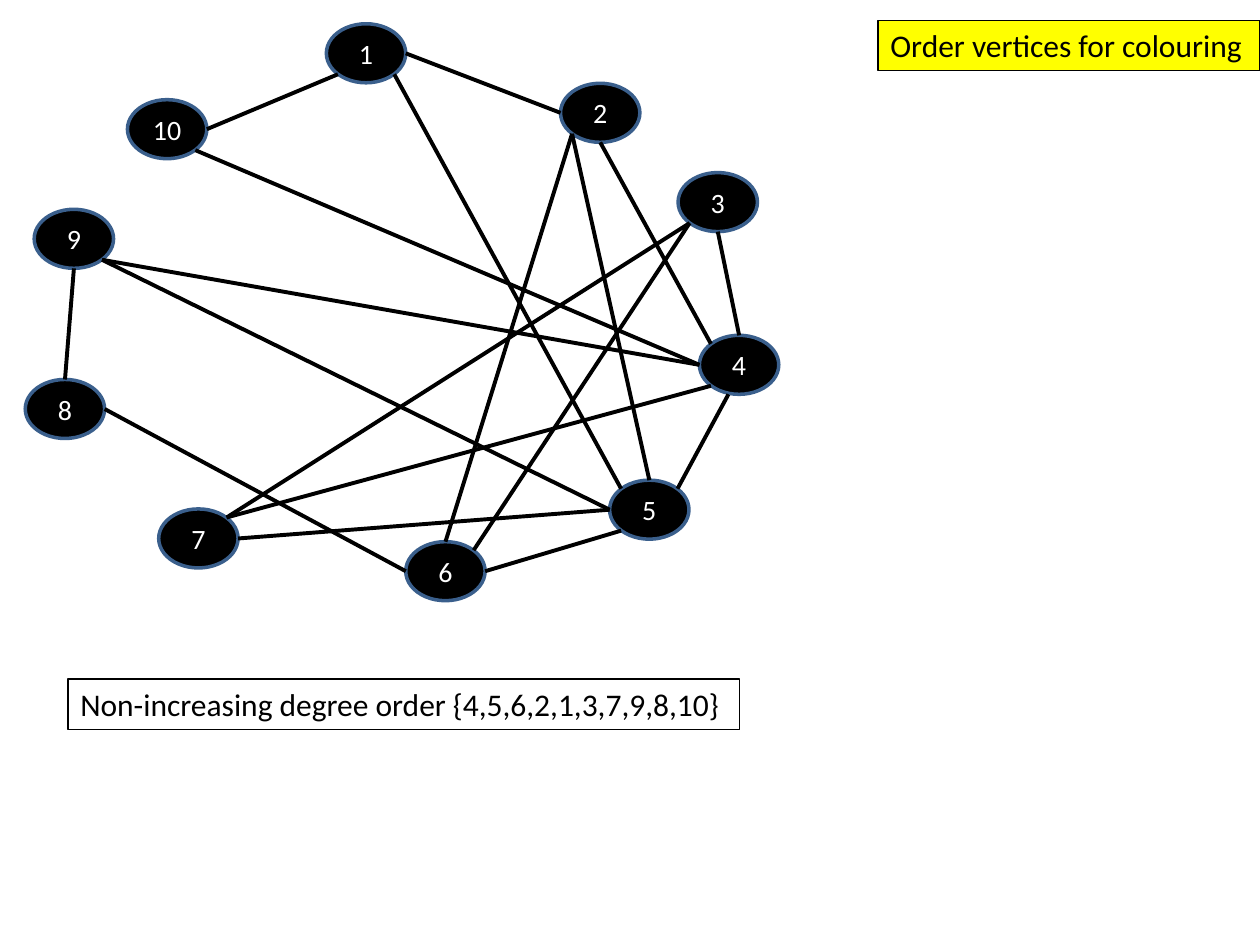
from pptx import Presentation
from pptx.dml.color import RGBColor as RGB
from pptx.enum.shapes import MSO_CONNECTOR as LINE, MSO_SHAPE as SHAPE
from pptx.enum.text import MSO_ANCHOR as ANCHOR, PP_ALIGN as ALIGN
from pptx.oxml.ns import qn
from pptx.util import Cm, Pt
from lxml.etree import SubElement

COLORS = {"ink": "000000", "rim": "3A5F8C", "label": "FFFFFF", "note": "FFFF00"}
FONT = "Calibri"
NODE_W, NODE_H = 1.6, 1.19

# Left and top of each vertex, in cm
NODES = {
    1: (6.58, 0.48), 2: (11.3, 1.68), 3: (13.67, 3.48), 4: (14.1, 6.76),
    5: (12.29, 9.68), 6: (8.18, 10.92), 7: (3.2, 10.26), 8: (0.51, 7.65),
    9: (0.69, 4.22), 10: (2.57, 2.01),
}

# Compass points on the rim, as parts of the half width and half height
DIAG = 0.71
SITES = {
    "N": (0, -1), "E": (1, 0), "S": (0, 1), "W": (-1, 0),
    "NE": (DIAG, -DIAG), "SE": (DIAG, DIAG),
    "SW": (-DIAG, DIAG), "NW": (-DIAG, -DIAG),
    "SSW": (-0.27, 1),
}

EDGES = [
    (1, "E", 2, "W"), (1, "SE", 5, "NW"), (10, "E", 1, "SW"),
    (2, "S", 4, "NW"), (8, "N", 9, "S"), (5, "N", 2, "SW"),
    (2, "SW", 6, "N"), (4, "N", 3, "S"), (3, "SW", 6, "NE"),
    (3, "SW", 7, "NE"), (5, "NE", 4, "SSW"), (7, "NE", 4, "SW"),
    (9, "SE", 4, "W"), (10, "SE", 4, "W"), (6, "E", 5, "SW"),
    (7, "E", 5, "W"), (9, "SE", 5, "W"), (6, "W", 8, "E"),
]


def color(name):
    return RGB.from_string(COLORS[name])


def set_line(line, name, width):
    line.color.rgb = color(name)
    line.width = Pt(width)


def set_text(frame, text, size, name):
    frame.text = text
    para = frame.paragraphs[0]
    para.font.name = FONT
    para.font.size = Pt(size)
    para.font.color.rgb = color(name)
    return para


def add_node(slide, num, left, top):
    node = slide.shapes.add_shape(
        SHAPE.OVAL, Cm(left), Cm(top), Cm(NODE_W), Cm(NODE_H))
    node.shadow.inherit = False
    node.fill.solid()
    node.fill.fore_color.rgb = color("ink")
    set_line(node.line, "rim", 2)
    frame = node.text_frame
    frame.vertical_anchor = ANCHOR.MIDDLE
    set_text(frame, str(num), 16, "label").alignment = ALIGN.CENTER


def rim_point(num, site):
    left, top = NODES[num]
    dx, dy = SITES[site]
    return Cm(left + NODE_W / 2 * (1 + dx)), Cm(top + NODE_H / 2 * (1 + dy))


def add_edge(slide, start, start_site, end, end_site):
    edge = slide.shapes.add_connector(
        LINE.STRAIGHT, *rim_point(start, start_site), *rim_point(end, end_site))
    set_line(edge.line, "ink", 2.25)
    SubElement(edge._element.spPr, qn("a:effectLst"))


def add_note(slide, text, left, top, width, fill=None):
    box = slide.shapes.add_textbox(Cm(left), Cm(top), Cm(width), Cm(1.02))
    set_line(box.line, "ink", 0.75)
    if fill:
        box.fill.solid()
        box.fill.fore_color.rgb = color(fill)
    box.text_frame.word_wrap = True
    set_text(box.text_frame, text, 18, "ink")


def main():
    deck = Presentation()
    deck.slide_width, deck.slide_height = Cm(25.4), Cm(19.05)
    slide = deck.slides.add_slide(deck.slide_layouts[6])
    for num, (left, top) in NODES.items():
        add_node(slide, num, left, top)
    for edge in EDGES:
        add_edge(slide, *edge)
    add_note(slide, "Non-increasing degree order {4,5,6,2,1,3,7,9,8,10}",
             1.37, 13.69, 13.54)
    add_note(slide, "Order vertices for colouring", 17.7, 0.41, 7.7, "note")
    deck.save("out.pptx")


if __name__ == "__main__":
    main()
